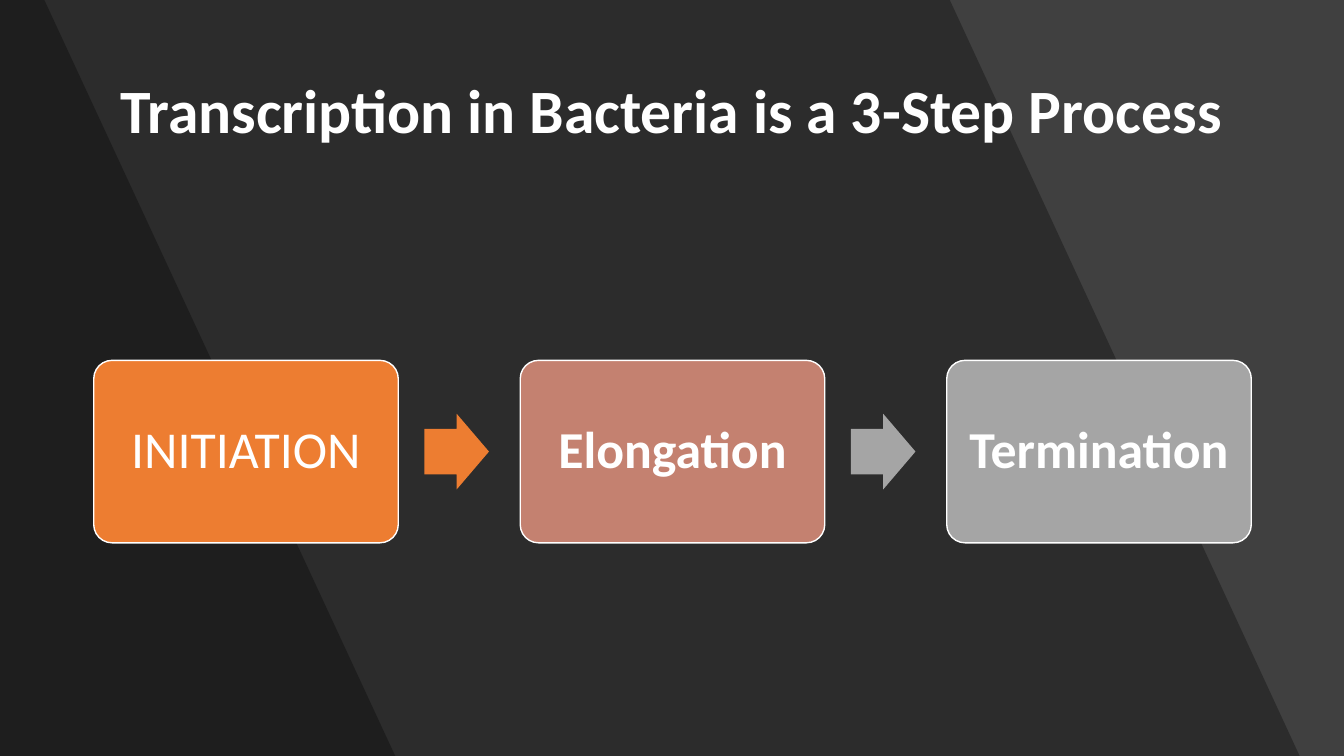
from pptx import Presentation
from pptx.dml.color import RGBColor
from pptx.enum.shapes import MSO_SHAPE
from pptx.enum.text import MSO_ANCHOR, MSO_AUTO_SIZE, PP_ALIGN
from pptx.oxml.ns import qn
from pptx.util import Inches, Pt
from lxml.etree import SubElement

WHITE = RGBColor(0xFF, 0xFF, 0xFF)
BLACK = RGBColor(0x00, 0x00, 0x00)
CHARCOAL = RGBColor(0x40, 0x40, 0x40)
ORANGE = RGBColor(0xED, 0x7D, 0x31)
ROSE = RGBColor(0xC4, 0x81, 0x70)
GRAY = RGBColor(0xA5, 0xA5, 0xA5)

TITLE = "Transcription in Bacteria is a 3-Step Process"
STEPS = [
    ("INITIATION", ORANGE, False),
    ("Elongation", ROSE, True),
    ("Termination", GRAY, True),
]
ARROW_COLORS = [ORANGE, GRAY]
BANDS = [(9.42, 12.89), (0.44, 3.92)]

WIDTH, HEIGHT = 13.33, 7.5
LEFT, PITCH, MIDDLE = 0.93, 4.23, 4.48
BOX_W, BOX_H = 3.02, 1.81
ARROW_W, ARROW_H, ARROW_GAP = 0.64, 0.75, 0.26


def format_text(tf, text, size, bold):
    tf.text = text
    tf.word_wrap = True
    tf.auto_size = MSO_AUTO_SIZE.NONE
    tf.vertical_anchor = MSO_ANCHOR.MIDDLE
    p = tf.paragraphs[0]
    p.alignment = PP_ALIGN.CENTER
    p.line_spacing = 0.9
    p.font.name = "Calibri"
    p.font.size = Pt(size)
    p.font.bold = bold
    p.font.color.rgb = WHITE


def paint(sp, color):
    sp.shadow.inherit = False
    sp.fill.solid()
    sp.fill.fore_color.rgb = color
    sp.line.fill.background()


def add_band(slide, top_right, bottom_right):
    points = [(top_right, 0), (bottom_right, HEIGHT), (0, HEIGHT)]
    builder = slide.shapes.build_freeform(0, 0)
    builder.add_line_segments([(Inches(x), Inches(y)) for x, y in points])
    sp = builder.convert_to_shape()
    paint(sp, BLACK)
    color = sp._element.spPr.find(qn("a:solidFill"))[0]
    SubElement(color, qn("a:alpha")).set("val", "30000")


def add_centered(slide, kind, left, width, height, color, adjustments):
    sp = slide.shapes.add_shape(kind, Inches(left), Inches(MIDDLE - height / 2),
                                Inches(width), Inches(height))
    for i, value in enumerate(adjustments):
        sp.adjustments[i] = value
    paint(sp, color)
    return sp


def add_step(slide, left, text, color, bold):
    sp = add_centered(slide, MSO_SHAPE.ROUNDED_RECTANGLE, left, BOX_W, BOX_H, color, [0.1])
    sp.line.color.rgb = WHITE
    sp.line.width = Pt(1)
    tf = sp.text_frame
    tf.margin_left = tf.margin_right = tf.margin_top = tf.margin_bottom = Inches(0.15)
    format_text(tf, text, 37, bold)


def main():
    prs = Presentation()
    prs.slide_width, prs.slide_height = Inches(WIDTH), Inches(HEIGHT)
    slide = prs.slides.add_slide(prs.slide_layouts[5])
    slide.background.fill.solid()
    slide.background.fill.fore_color.rgb = CHARCOAL

    for band in BANDS:
        add_band(slide, *band)

    title = slide.shapes.title
    title.left, title.top = Inches(0.91), Inches(0.4)
    title.width, title.height = Inches(11.51), Inches(1.45)
    format_text(title.text_frame, TITLE, 44, True)
    slide.shapes._spTree.append(title._element)

    for i, step in enumerate(STEPS):
        add_step(slide, LEFT + i * PITCH, *step)
    for i, color in enumerate(ARROW_COLORS):
        left = LEFT + i * PITCH + BOX_W + ARROW_GAP
        add_centered(slide, MSO_SHAPE.RIGHT_ARROW, left, ARROW_W, ARROW_H, color, [0.6, 0.5])

    prs.save("out.pptx")


if __name__ == "__main__":
    main()
